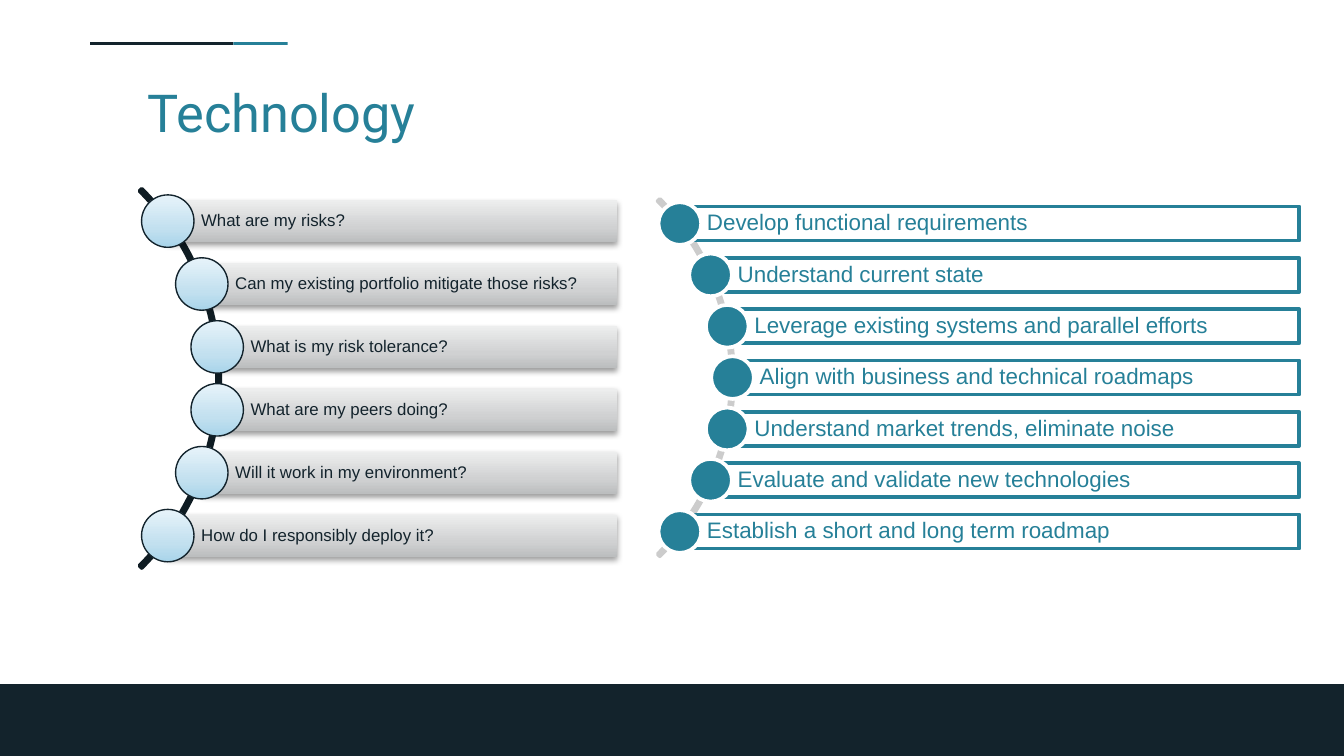
from copy import deepcopy
from math import sqrt

from lxml.etree import SubElement
from pptx import Presentation
from pptx.dml.color import RGBColor
from pptx.enum.shapes import MSO_SHAPE
from pptx.enum.text import MSO_ANCHOR, MSO_AUTO_SIZE, PP_ALIGN
from pptx.oxml.ns import qn
from pptx.util import Pt

COLORS = {
    "navy": "13232C",
    "ink": "0F1C23",
    "teal": "268098",
    "white": "FFFFFF",
    "silver": "CCCCCC",
    "shadow": "000000",
}
GRAY_GRADIENT = [(0, "BCBEBF"), (0.35, "D0D1D2"), (1, "EDEEEE")]
BLUE_GRADIENT = [(0, "A8D4EA"), (0.35, "C2E0EF"), (1, "E7F3FA")]

QUESTIONS = {
    "items": [
        "What are my risks?",
        "Can my existing portfolio mitigate those risks?",
        "What is my risk tolerance?",
        "What are my peers doing?",
        "Will it work in my environment?",
        "How do I responsibly deploy it?",
    ],
    "center": (-25.6, 202.7), "arc_size": 287.3, "arc_color": "ink",
    "pitch": 33.7, "right": 330.5, "bar_height": 22.5, "dot_size": 28.1,
    "bar_fill": GRAY_GRADIENT, "bar_line": None, "bar_shadow": True,
    "dot_fill": BLUE_GRADIENT, "dot_line": ("navy", 0.75),
    "text_inset": 17.9, "text_size": 9, "text_color": "navy",
}
STEPS = {
    "items": [
        "Develop functional requirements",
        "Understand current state",
        "Leverage existing systems and parallel efforts",
        "Align with business and technical roadmaps",
        "Understand market trends, eliminate noise",
        "Evaluate and validate new technologies",
        "Establish a short and long term roadmap",
    ],
    "center": (257.8, 202.3), "arc_size": 270.7, "arc_color": "silver",
    "pitch": 27.5, "right": 696, "bar_height": 18.3, "dot_size": 22.9,
    "bar_fill": "white", "bar_line": ("teal", 2), "bar_shadow": False,
    "dot_fill": "teal", "dot_line": ("white", 2),
    "text_inset": 14.5, "text_size": 12, "text_color": "teal",
}


def rgb(name):
    return RGBColor.from_string(COLORS[name])


def apply_format(target, values):
    for name, value in values.items():
        setattr(target, name, value)


def fill_gradient(shape, stops):
    """Fill from bottom to top with (position, hex color) stops."""
    shape.fill.gradient()
    shape.fill.gradient_angle = 90
    stop_list = shape._element.spPr.find(".//" + qn("a:gsLst"))
    while len(stop_list) < len(stops):
        stop_list.append(deepcopy(stop_list[0]))
    for stop, (position, color) in zip(shape.fill.gradient_stops, stops):
        stop.position = position
        stop.color.rgb = RGBColor.from_string(color)


def add_shape(slide, kind, left, top, width, height, fill=None, line=None):
    """Fill is a color name, a list of gradient stops or None."""
    shape = slide.shapes.add_shape(kind, Pt(left), Pt(top), Pt(width), Pt(height))
    shape.shadow.inherit = False
    if fill is None:
        shape.fill.background()
    elif isinstance(fill, list):
        fill_gradient(shape, fill)
    else:
        shape.fill.solid()
        shape.fill.fore_color.rgb = rgb(fill)
    if line is None:
        shape.line.fill.background()
    else:
        color, weight = line
        shape.line.color.rgb = rgb(color)
        shape.line.width = Pt(weight)
    return shape


def add_drop_shadow(shape):
    effects = shape._element.spPr.find(qn("a:effectLst"))
    shadow = SubElement(effects, qn("a:outerShdw"), blurRad=str(Pt(3.1)),
                        dist=str(Pt(1.6)), dir="5400000", rotWithShape="0")
    color = SubElement(shadow, qn("a:srgbClr"), val=COLORS["shadow"])
    SubElement(color, qn("a:alpha"), val="38000")


def write_text(shape, text, frame_format, font_format, line_spacing=None):
    frame = shape.text_frame
    frame.text = text
    apply_format(frame, {"word_wrap": True, "auto_size": MSO_AUTO_SIZE.NONE})
    apply_format(frame, frame_format)
    paragraph = frame.paragraphs[0]
    apply_format(paragraph, {"alignment": PP_ALIGN.LEFT, "line_spacing": line_spacing})
    color = font_format["color"]
    apply_format(paragraph.runs[0].font,
                 {"name": font_format["name"], "size": Pt(font_format["size"])})
    paragraph.runs[0].font.color.rgb = rgb(color)


def add_title(slide, text):
    title = slide.shapes.title
    apply_format(title, {"left": Pt(72), "top": Pt(36),
                         "width": Pt(671), "height": Pt(45.4)})
    margins = {f"margin_{side}": Pt(7.2) for side in ("left", "top", "right", "bottom")}
    write_text(title, text, {"vertical_anchor": MSO_ANCHOR.TOP, **margins},
               {"name": "Roboto", "size": 28, "color": "teal"})


def add_decoration(slide):
    add_shape(slide, MSO_SHAPE.RECTANGLE, 0, 366.5, 720, 38.5, "navy")
    add_shape(slide, MSO_SHAPE.RECTANGLE, 125, 22.5, 29.2, 1.5, "teal")
    add_shape(slide, MSO_SHAPE.RECTANGLE, 48.3, 22.5, 76.7, 1.5, "navy")


def add_arc(slide, design):
    center_x, center_y = design["center"]
    size = design["arc_size"]
    arc = add_shape(slide, MSO_SHAPE.BLOCK_ARC, center_x - size / 2,
                    center_y - size / 2, size, size, line=(design["arc_color"], 2))
    for index, value in enumerate((189, 27, 0.006)):
        arc.adjustments[index] = value


def add_row(slide, design, text, left, middle):
    """Add a bar that starts at left and a dot centred on that start."""
    height, dot = design["bar_height"], design["dot_size"]
    bar = add_shape(slide, MSO_SHAPE.RECTANGLE, left, middle - height / 2,
                    design["right"] - left, height,
                    design["bar_fill"], design["bar_line"])
    if design["bar_shadow"]:
        add_drop_shadow(bar)
    margins = {f"margin_{side}": Pt(2) for side in ("top", "right", "bottom")}
    margins["margin_left"] = Pt(design["text_inset"])
    write_text(bar, text, {"vertical_anchor": MSO_ANCHOR.MIDDLE, **margins},
               {"name": "Arial", "size": design["text_size"],
                "color": design["text_color"]}, line_spacing=0.9)
    add_shape(slide, MSO_SHAPE.OVAL, left - dot / 2, middle - dot / 2, dot, dot,
              design["dot_fill"], design["dot_line"])


def add_curved_list(slide, design):
    """Space the rows evenly and start each one on the arc."""
    add_arc(slide, design)
    center_x, center_y = design["center"]
    radius = design["arc_size"] / 2 - 0.7
    items = design["items"]
    for index, text in enumerate(items):
        offset = (index - (len(items) - 1) / 2) * design["pitch"]
        left = center_x + sqrt(radius ** 2 - offset ** 2)
        add_row(slide, design, text, left, center_y + offset)


def main():
    presentation = Presentation()
    apply_format(presentation, {"slide_width": Pt(720), "slide_height": Pt(405)})
    slide = presentation.slides.add_slide(presentation.slide_layouts[5])
    add_decoration(slide)
    add_title(slide, "Technology")
    for design in (STEPS, QUESTIONS):
        add_curved_list(slide, design)
    presentation.save("out.pptx")


if __name__ == "__main__":
    main()
